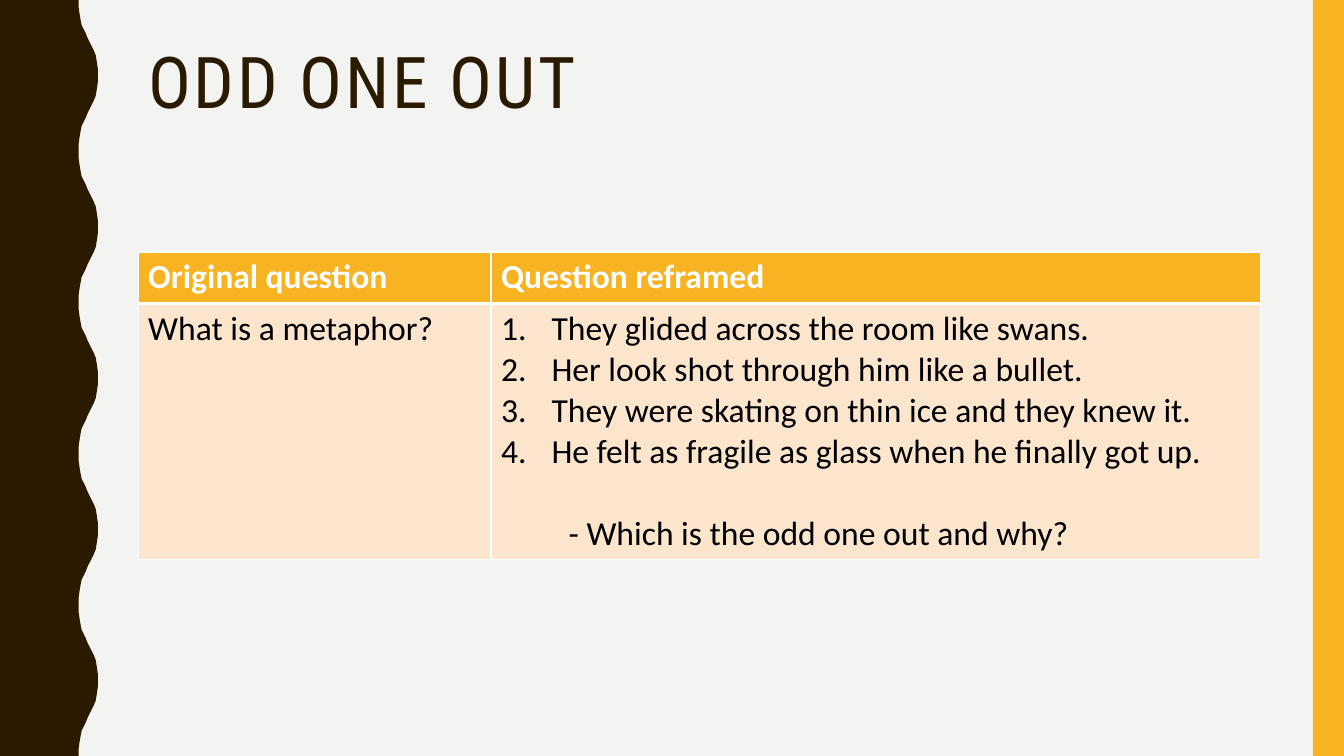
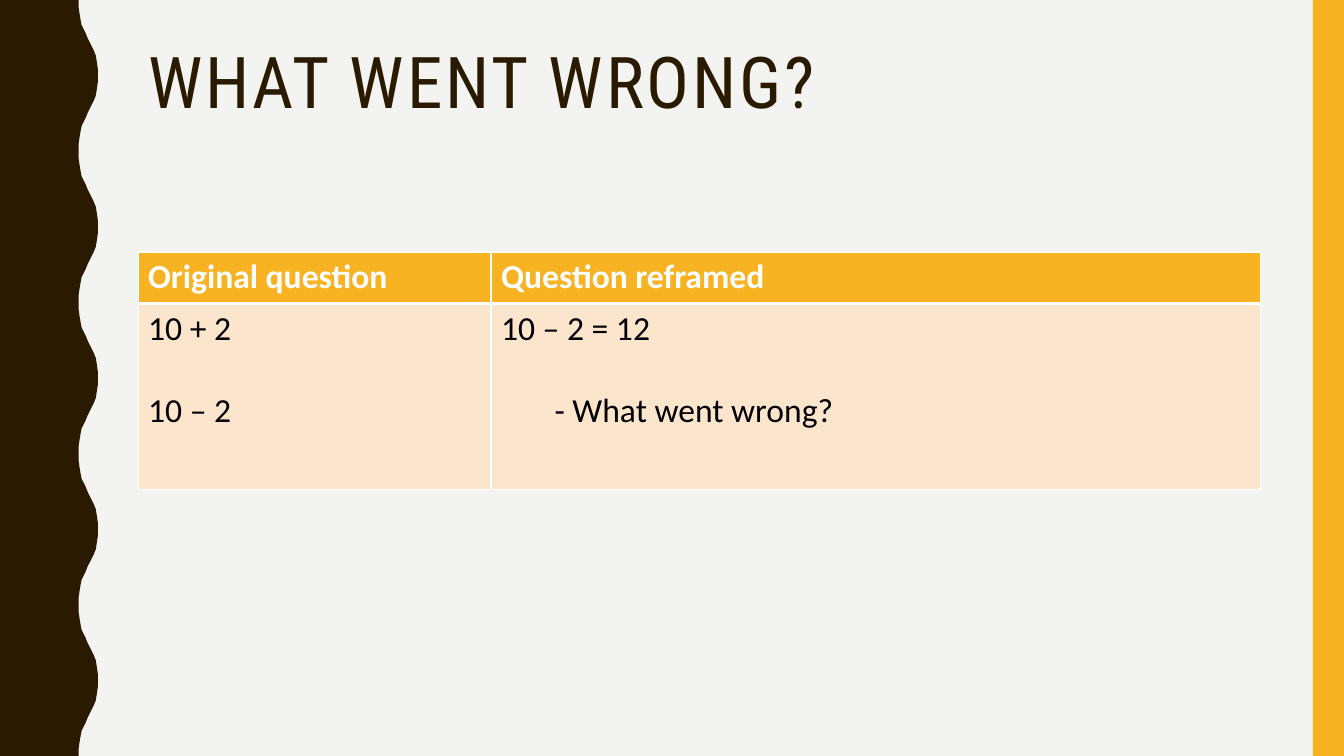
from lxml import etree
from pptx import Presentation
from pptx.dml.color import RGBColor
from pptx.enum.shapes import MSO_SHAPE
from pptx.enum.text import MSO_ANCHOR
from pptx.oxml.ns import qn
from pptx.util import Inches, Pt

RECTANGLE = MSO_SHAPE.RECTANGLE
TOP = MSO_ANCHOR.TOP

# Content: body cells hold (text, style) lines; style None is plain text
HEADINGS = ["Original question", "Question reframed"]
LESSONS = [
    {
        "title": "ODD ONE OUT",
        "body_height": 2.54,
        "prompt_indent": 0.67,
        "cells": [
            [("What is a metaphor?", None)],
            [
                ("They glided across the room like swans.", "numbered"),
                ("Her look shot through him like a bullet.", "numbered"),
                ("They were skating on thin ice and they knew it.", "numbered"),
                ("He felt as fragile as glass when he finally got up.", "numbered"),
                ("- Which is the odd one out and why?", "prompt"),
            ],
        ],
    },
    {
        "title": "WHAT WENT WRONG?",
        "body_height": 1.85,
        "prompt_indent": 0.53,
        "cells": [
            [("10 + 2", None), ("10 – 2", "spaced")],
            [("10 – 2 = 12", None), ("- What went wrong?", "prompt")],
        ],
    },
]

# Shared look
PAPER, BROWN, AMBER, PEACH = "F3F3F2", "2A1A00", "F8B323", "FCE5CD"
WHITE, BLACK = "FFFFFF", "000000"
TITLE_FONT = {"name": "Roboto Condensed", "size": Pt(51)}
HEADING_FONT = {"name": "Calibri", "size": Pt(24), "bold": True}
BODY_FONT = {"name": "Calibri", "size": Pt(24), "bold": False}
LINE_GAP = Pt(29.3)

# Shared layout, in inches
WIDTH, HEIGHT = 13.33, 7.5
LEFT, CONTENT_WIDTH = 1.37, 11.13
TITLE_TOP, TITLE_HEIGHT = 0.42, 1.63
TABLE_TOP, HEADING_HEIGHT = 2.5, 0.51
COLUMNS = [3.5, 7.63]
STRIPE_WIDTH = 0.31
NUMBER_INDENT = 0.5

# Half a wave from trough to crest, in hundredths of an inch
HALF_WAVE = [(78, 0), (78, 7), (79, 14), (80, 20), (81, 25), (83, 29), (85, 33),
             (87, 38), (89, 42), (91, 46), (93, 50), (95, 55), (96, 61), (97, 68),
             (97, 75)]
WAVE_LENGTH, WAVE_COUNT = 150, 5


def rgb(hex_color):
    return RGBColor.from_string(hex_color)


def format_font(font, values, color):
    for name, value in values.items():
        setattr(font, name, value)
    font.color.rgb = rgb(color)


def paint(shape, color):
    shape.shadow.inherit = False
    shape.fill.solid()
    shape.fill.fore_color.rgb = rgb(color)
    shape.line.fill.background()


def add_bands(slide):
    # Wavy band on the left: each half wave is mirrored at its crest
    wave = HALF_WAVE + [(x, WAVE_LENGTH - y) for x, y in reversed(HALF_WAVE[:-1])]
    edge = [(x, y + n * WAVE_LENGTH) for n in range(WAVE_COUNT) for x, y in wave]
    outline = slide.shapes.build_freeform(0, 0, scale=Inches(0.01))
    outline.add_line_segments(edge + [(0, WAVE_COUNT * WAVE_LENGTH)], close=True)
    paint(outline.convert_to_shape(), BROWN)

    # Straight stripe on the right
    stripe = slide.shapes.add_shape(RECTANGLE, Inches(WIDTH - STRIPE_WIDTH), 0,
                                    Inches(STRIPE_WIDTH), Inches(HEIGHT))
    paint(stripe, AMBER)


def add_title(slide, text):
    box = slide.shapes.add_textbox(Inches(LEFT), Inches(TITLE_TOP),
                                   Inches(CONTENT_WIDTH), Inches(TITLE_HEIGHT))
    frame = box.text_frame
    frame.word_wrap = True
    frame.vertical_anchor = TOP
    line = frame.paragraphs[0]
    line.line_spacing = 0.9
    run = line.add_run()
    run.text = text
    format_font(run.font, TITLE_FONT, BROWN)
    run.font._element.set("spc", "200")


def set_borders(cell, widths):
    properties = cell._tc.get_or_add_tcPr()
    for position, (side, width) in enumerate(widths.items()):
        border = etree.Element(qn(f"a:ln{side}"), w=str(Pt(width)))
        fill = etree.SubElement(border, qn("a:solidFill"))
        etree.SubElement(fill, qn("a:srgbClr"), val=WHITE)
        properties.insert(position, border)


def set_indent(paragraph, left, hanging=0):
    properties = paragraph._p.get_or_add_pPr()
    properties.set("marL", str(Inches(left)))
    properties.set("indent", str(-Inches(hanging)))
    return properties


def fill_cell(cell, lines, fill, font, color, prompt_indent):
    cell.fill.solid()
    cell.fill.fore_color.rgb = rgb(fill)
    frame = cell.text_frame
    for index, (text, style) in enumerate(lines):
        paragraph = frame.add_paragraph() if index else frame.paragraphs[0]
        if style == "numbered":
            properties = set_indent(paragraph, NUMBER_INDENT, NUMBER_INDENT)
            etree.SubElement(properties, qn("a:buAutoNum"), type="arabicPeriod")
        elif style == "prompt":
            set_indent(paragraph, prompt_indent)
        if style in ("prompt", "spaced"):
            paragraph.space_before = LINE_GAP
        run = paragraph.add_run()
        run.text = text
        format_font(run.font, font, color)


def add_questions(slide, lesson):
    heights = [HEADING_HEIGHT, lesson["body_height"]]
    table = slide.shapes.add_table(
        len(heights), len(COLUMNS), Inches(LEFT), Inches(TABLE_TOP),
        Inches(CONTENT_WIDTH), Inches(sum(heights))).table
    table.horz_banding = False
    for column, width in zip(table.columns, COLUMNS):
        column.width = Inches(width)
    for row, height in zip(table.rows, heights):
        row.height = Inches(height)

    headings = [[(heading, None)] for heading in HEADINGS]
    rows = [
        (headings, AMBER, HEADING_FONT, WHITE, {"L": 1, "R": 1, "T": 1, "B": 3}),
        (lesson["cells"], PEACH, BODY_FONT, BLACK, {"L": 1, "R": 1, "T": 3, "B": 1}),
    ]
    for r, (cells, fill, font, color, borders) in enumerate(rows):
        for c, lines in enumerate(cells):
            cell = table.cell(r, c)
            fill_cell(cell, lines, fill, font, color, lesson["prompt_indent"])
            set_borders(cell, borders)


def main():
    deck = Presentation()
    deck.slide_width, deck.slide_height = Inches(WIDTH), Inches(HEIGHT)
    backdrop = deck.slide_master.background.fill
    backdrop.solid()
    backdrop.fore_color.rgb = rgb(PAPER)
    for lesson in LESSONS:
        slide = deck.slides.add_slide(deck.slide_layouts[6])
        add_bands(slide)
        add_title(slide, lesson["title"])
        add_questions(slide, lesson)
    deck.save("out.pptx")


if __name__ == "__main__":
    main()
